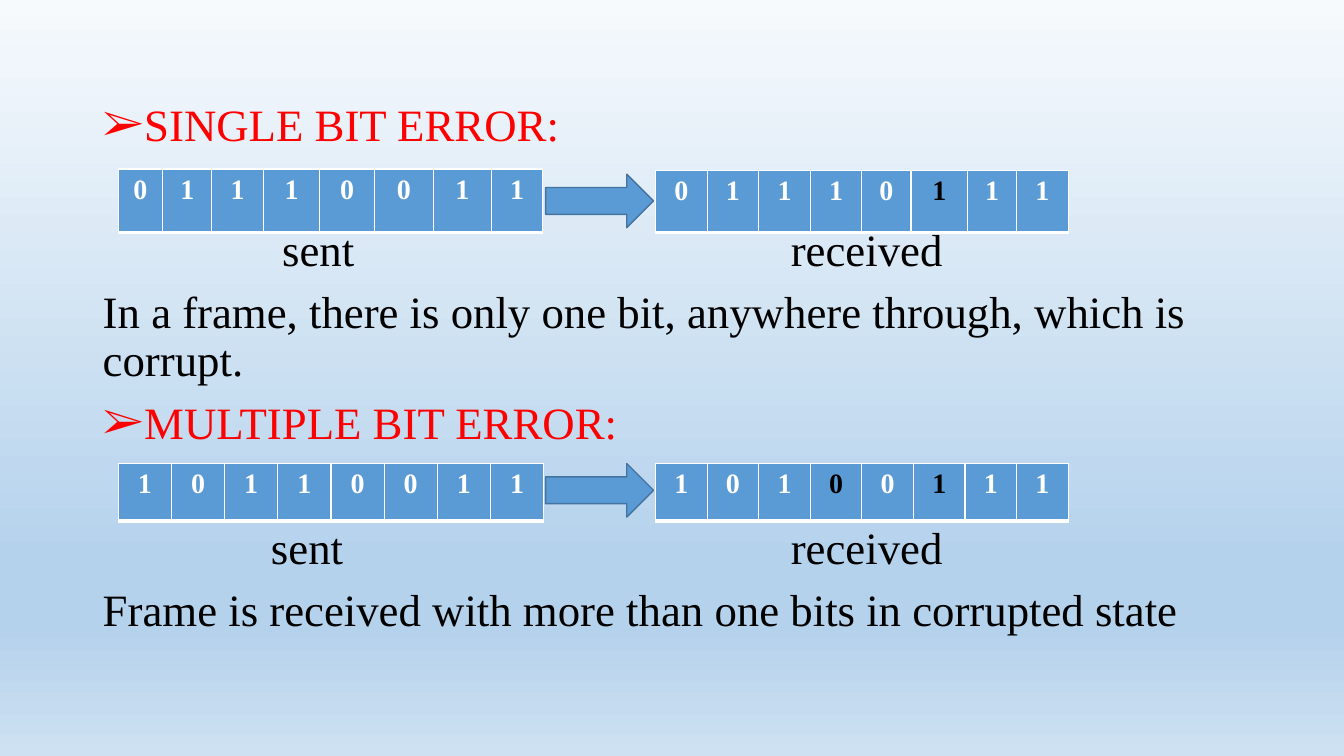
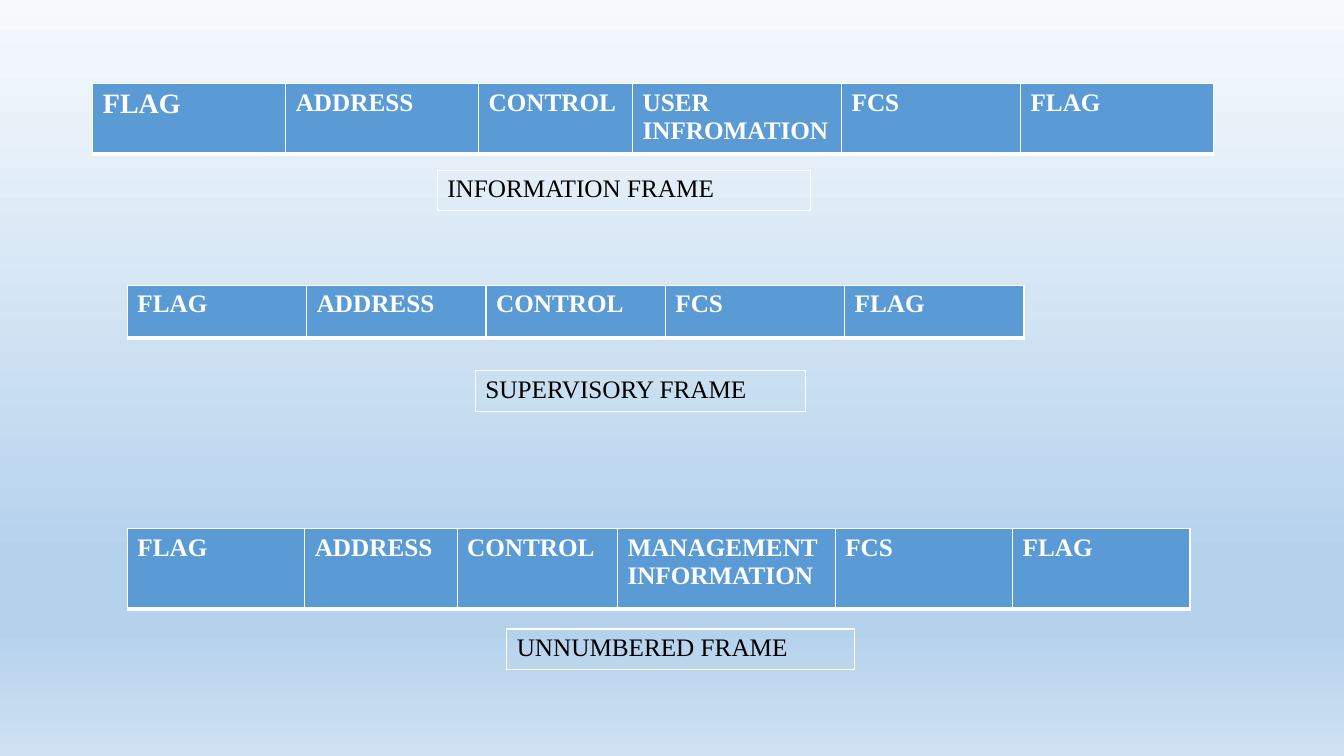
from dataclasses import dataclass

from lxml import etree
from pptx import Presentation
from pptx import util as u
from pptx.dml.color import RGBColor
from pptx.enum import shapes, text
from pptx.oxml import ns


@dataclass(frozen=True)
class Theme:
    font: str = "Times New Roman"
    body_size: int = 32
    bit_size: int = 20
    field_size: int = 18
    black: str = "000000"
    white: str = "FFFFFF"
    red: str = "FF0000"
    blue: str = "5B9BD5"
    outline: str = "43739E"
    background: tuple = ((0, "F7FAFD"), (8, "F0F6FB"), (74, "B5D2EC"), (83, "B5D2EC"), (100, "CEE1F2"))
    plain_table: str = "{2D5ABB26-0587-4C30-8999-92F81FD0307C}"


@dataclass(frozen=True)
class Box:
    left: float
    top: float
    width: float
    height: float

    def inside(self, left, top, width, height):
        return Box(self.left + left, self.top + top, width, height)

    def lengths(self):
        return [u.Cm(value) for value in (self.left, self.top, self.width, self.height)]


THEME = Theme()
BODY_LEFT, BODY_WIDTH = 2.34, 29.21
CENTER = text.PP_ALIGN.CENTER


def add_child(parent, tag, **attributes):
    return etree.SubElement(parent, ns.qn(tag), {name: str(value) for name, value in attributes.items()})


def set_font(paragraph, size, color, bold=False):
    font = paragraph.font
    font.name, font.size, font.bold = THEME.font, u.Pt(size), bold
    font.color.rgb = RGBColor.from_string(color)


def set_background(master):
    fill = master.background.fill
    fill.gradient()
    fill.gradient_angle = 270
    stops = next(master.element.iter(ns.qn("a:gsLst")))
    for stop in list(stops):
        stops.remove(stop)
    for position, color in THEME.background:
        stop = add_child(stops, "a:gs", pos=position * 1000)
        add_child(stop, "a:srgbClr", val=color)


def set_borders(cell, bottom_width):
    properties = cell._tc.get_or_add_tcPr()
    for side, width in (("L", 1), ("R", 1), ("T", 1), ("B", bottom_width)):
        line = add_child(properties, f"a:ln{side}", w=u.Pt(width))
        add_child(add_child(line, "a:solidFill"), "a:srgbClr", val=THEME.white)


def add_row(slide, left, top, height, widths, values, size, color=THEME.white,
            filled=True, alignment=None, special=None):
    box = Box(left, top, sum(widths), height)
    frame = slide.shapes.add_table(1, len(values), *box.lengths())
    next(frame.element.iter(ns.qn("a:tableStyleId"))).text = THEME.plain_table
    table = frame.table
    table.first_row = table.horz_banding = False
    for index, (width, value) in enumerate(zip(widths, values)):
        table.columns[index].width = u.Cm(width)
        cell = table.cell(0, index)
        set_borders(cell, 3 if filled else 1)
        if filled:
            cell.fill.solid()
            cell.fill.fore_color.rgb = RGBColor.from_string(THEME.blue)
        else:
            cell.fill.background()
        cell.text_frame.text = value
        cell_size, cell_color = (special or {}).get(index, (size, color))
        for paragraph in cell.text_frame.paragraphs:
            paragraph.alignment = alignment
            set_font(paragraph, cell_size, cell_color, filled)


def add_bits(slide, left, top, height, widths, bits, corrupt=()):
    special = {index: (THEME.bit_size, THEME.black) for index in corrupt}
    add_row(slide, left, top, height, widths, bits, THEME.bit_size, alignment=CENTER, special=special)


def add_arrow(slide, box):
    arrow = slide.shapes.add_shape(shapes.MSO_SHAPE.RIGHT_ARROW, *box.lengths())
    arrow.shadow.inherit = False
    arrow.fill.solid()
    arrow.fill.fore_color.rgb = RGBColor.from_string(THEME.blue)
    arrow.line.color.rgb = RGBColor.from_string(THEME.outline)
    arrow.line.width = u.Pt(1)


def add_section_text(slide, box, heading, tabs, explanation):
    frame = slide.shapes.add_textbox(*box.lengths()).text_frame
    frame.word_wrap = True
    frame.text = "\n".join((heading, "\tsent\treceived", explanation))
    title, labels, closing = frame.paragraphs
    for paragraph, space, color in ((title, 10, THEME.red), (labels, 54.5, THEME.black),
                                    (closing, 10, THEME.black)):
        paragraph.line_spacing = 0.9
        paragraph.space_before = u.Pt(space)
        set_font(paragraph, THEME.body_size, color)

    properties = title._p.get_or_add_pPr()
    properties.set("marL", str(u.Cm(0.64)))
    properties.set("indent", str(-u.Cm(0.64)))
    bullet_font = add_child(properties, "a:buFont", typeface=THEME.font)
    bullet = add_child(properties, "a:buChar", char="➢")
    for element in (bullet_font, bullet):
        properties.find(ns.qn("a:defRPr")).addprevious(element)

    properties = labels._p.get_or_add_pPr()
    tab_list = add_child(properties, "a:tabLst")
    for position in tabs:
        add_child(tab_list, "a:tab", pos=u.Cm(position), algn="l")
    properties.find(ns.qn("a:defRPr")).addprevious(tab_list)


def error_section(slide, box, heading, explanation, tabs, sent, received, arrow_top):
    add_section_text(slide, box, heading, tabs, explanation)
    for left, (top, *row) in ((0.64, sent), (14.18, received)):
        add_bits(slide, box.left + left, box.top + top, *row)
    add_arrow(slide, box.inside(11.41, arrow_top, 2.72, 1.35))


def frame_section(slide, box, widths, fields, caption, caption_box, special=None):
    add_row(slide, box.left, box.top, box.height, widths, fields, THEME.field_size, special=special)
    place = box.inside(*caption_box)
    add_row(slide, place.left, place.top, place.height, [place.width], [caption],
            THEME.field_size, THEME.black, filled=False)


def build_errors(slide):
    error_section(
        slide, Box(BODY_LEFT, 2.46, BODY_WIDTH, 7.4), "SINGLE BIT ERROR:",
        "In a frame, there is only one bit, anywhere through, which is corrupt.", (4.52, 17.34),
        (1.8, 1.6, [1.12, 1.24, 1.3, 1.42, 1.37, 1.5, 1.45, 1.3], "01110011"),
        (1.83, 1.57, [1.3, 1.3, 1.3, 1.3, 1.24, 1.42, 1.24, 1.3], "01110111", (5,)), 1.93)
    error_section(
        slide, Box(BODY_LEFT, 9.97, BODY_WIDTH, 6.2), "MULTIPLE BIT ERROR:",
        "Frame is received with more than one bits in corrupted state", (4.24, 17.34),
        (1.71, 1.44, [1.34] * 8, "10110011"),
        (1.71, 1.44, [1.3] * 8, "10100111", (3, 5)), 1.71)


def build_frames(slide):
    start, end = ["FLAG", "ADDRESS", "CONTROL"], ["FCS", "FLAG"]
    frame_section(
        slide, Box(2.34, 2.11, 28.24, 1.6), [4.86, 4.86, 3.88, 5.27, 4.51, 4.86],
        start + ["USER INFROMATION"] + end, "INFORMATION FRAME", (8.68, 2.18, 9.4, 0.96),
        {0: (THEME.bit_size, THEME.white)})
    frame_section(
        slide, Box(3.21, 7.19, 22.6, 1.32), [4.52] * 5,
        start + end, "SUPERVISORY FRAME", (8.77, 2.15, 8.31, 1.03))
    frame_section(
        slide, Box(3.21, 13.32, 26.78, 2.03), [4.47, 3.84, 4.04, 5.49, 4.47, 4.47],
        start + ["MANAGEMENT\nINFORMATION"] + end, "UNNUMBERED FRAME", (9.56, 2.53, 8.76, 0.98))


def main():
    presentation = Presentation()
    presentation.slide_width, presentation.slide_height = u.Cm(33.87), u.Cm(19.05)
    set_background(presentation.slide_master)
    for build in (build_errors, build_frames):
        build(presentation.slides.add_slide(presentation.slide_layouts[6]))
    presentation.save("out.pptx")


if __name__ == "__main__":
    main()
